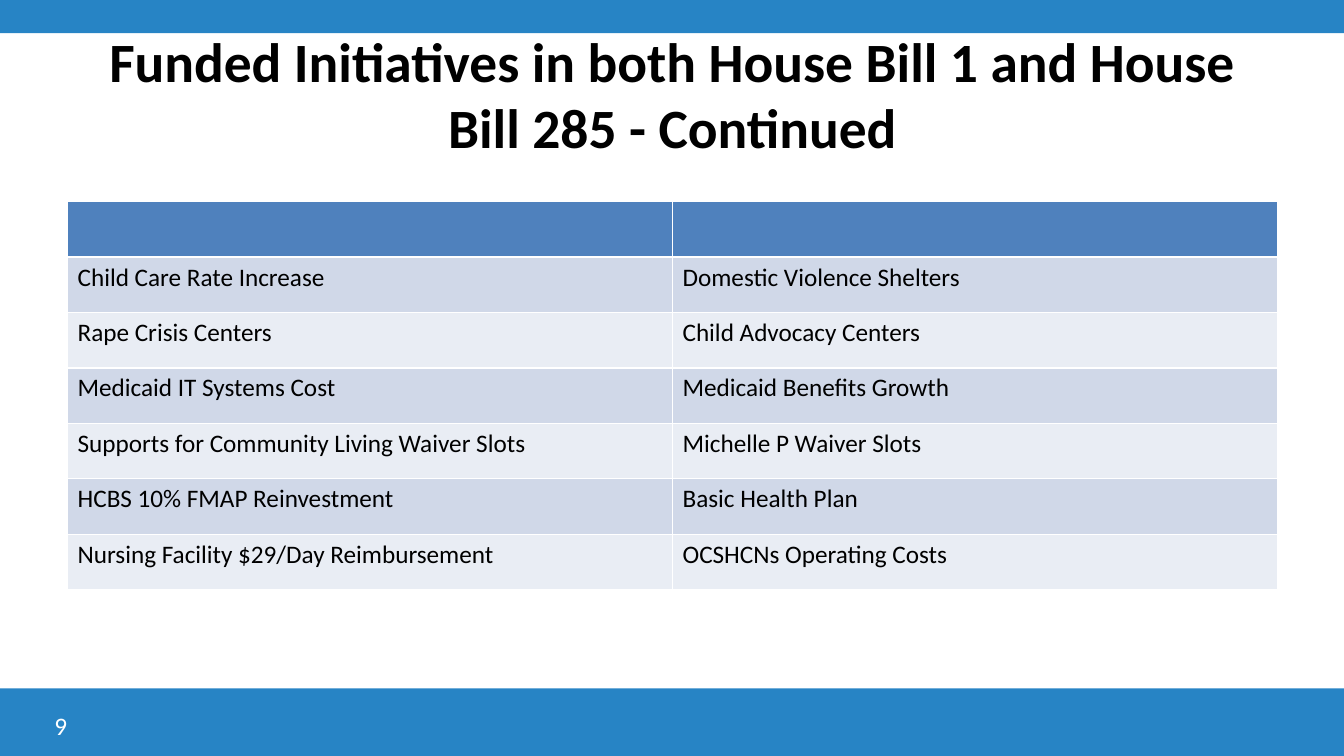
"""Build the slide listing initiatives funded in both House bills."""
from pptx import Presentation
from pptx.dml.color import RGBColor
from pptx.enum.shapes import MSO_SHAPE
from pptx.enum.text import MSO_ANCHOR, MSO_AUTO_SIZE, PP_ALIGN
from pptx.util import Inches, Pt

RECTANGLE = MSO_SHAPE.RECTANGLE
MIDDLE = MSO_ANCHOR.MIDDLE
NO_AUTOFIT = MSO_AUTO_SIZE.NONE
CENTER = PP_ALIGN.CENTER
LEFT = PP_ALIGN.LEFT

WIDTH, HEIGHT = Inches(13.33), Inches(7.5)
MARGIN = Inches(0.67)
CONTENT_WIDTH = Inches(12)
ROW_HEIGHT = Inches(0.55)
FONT = "Calibri"
BODY_SIZE = 18

BAND_BLUE = RGBColor(0x27, 0x84, 0xC5)
HEADER_BLUE = RGBColor(0x4F, 0x81, 0xBD)
ROW_FILLS = (RGBColor(0xE9, 0xED, 0xF4), RGBColor(0xD0, 0xD8, 0xE8))
BLACK = RGBColor(0, 0, 0)
WHITE = RGBColor(0xFF, 0xFF, 0xFF)

TITLE = "Funded Initiatives in both House Bill 1 and House Bill 285 - Continued"
INITIATIVES = [
    ("Child Care Rate Increase", "Domestic Violence Shelters"),
    ("Rape Crisis Centers", "Child Advocacy Centers"),
    ("Medicaid IT Systems Cost", "Medicaid Benefits Growth"),
    ("Supports for Community Living Waiver Slots", "Michelle P Waiver Slots"),
    ("HCBS 10% FMAP Reinvestment", "Basic Health Plan"),
    ("Nursing Facility $29/Day Reimbursement", "OCSHCNs Operating Costs"),
]


def write(tf, text, size, color, bold=False, align=LEFT):
    """Fill a text frame with one formatted paragraph."""
    tf.text = text
    p = tf.paragraphs[0]
    p.alignment = align
    for r in p.runs:
        r.font.name = FONT
        r.font.size = Pt(size)
        r.font.bold = bold
        r.font.color.rgb = color


def add_band(s, top, height):
    """Draw a full-width blue band."""
    sp = s.shapes.add_shape(RECTANGLE, 0, top, WIDTH, height)
    sp.shadow.inherit = False
    sp.fill.solid()
    sp.fill.fore_color.rgb = BAND_BLUE
    sp.line.fill.background()


def add_title(s, text):
    """Place and format the title placeholder."""
    sp = s.shapes.title
    sp.left, sp.top = MARGIN, Inches(0.3)
    sp.width, sp.height = CONTENT_WIDTH, Inches(1.25)
    tf = sp.text_frame
    tf.word_wrap = True
    tf.auto_size = NO_AUTOFIT
    tf.vertical_anchor = MIDDLE
    write(tf, text, 39.6, BLACK, bold=True, align=CENTER)


def add_initiatives(s, rows):
    """Add a table with a blank header row above alternating rows."""
    cols = len(rows[0])
    count = len(rows) + 1
    table = s.shapes.add_table(count, cols, MARGIN, Inches(2),
                               CONTENT_WIDTH, ROW_HEIGHT * count).table
    for i, texts in enumerate([("",) * cols] + rows):
        table.rows[i].height = ROW_HEIGHT
        for j, text in enumerate(texts):
            cell = table.cell(i, j)
            cell.fill.solid()
            cell.fill.fore_color.rgb = ROW_FILLS[i % 2] if i else HEADER_BLUE
            write(cell.text_frame, text, BODY_SIZE, BLACK)


def add_page_number(s, number):
    """Write the page number on the bottom band."""
    sp = s.shapes.add_textbox(Inches(0.44), Inches(7), Inches(3.11), Inches(0.4))
    sp.text_frame.word_wrap = True
    write(sp.text_frame, number, BODY_SIZE, WHITE)


def main():
    """Assemble and save the slide."""
    prs = Presentation()
    prs.slide_width, prs.slide_height = WIDTH, HEIGHT
    s = prs.slides.add_slide(prs.slide_layouts.get_by_name("Title Only"))
    top_band, bottom_band = Inches(0.33), Inches(0.67)
    add_band(s, 0, top_band)
    add_band(s, HEIGHT - bottom_band, bottom_band)
    add_title(s, TITLE)
    add_initiatives(s, INITIATIVES)
    add_page_number(s, "9")
    prs.save("out.pptx")


if __name__ == "__main__":
    main()
